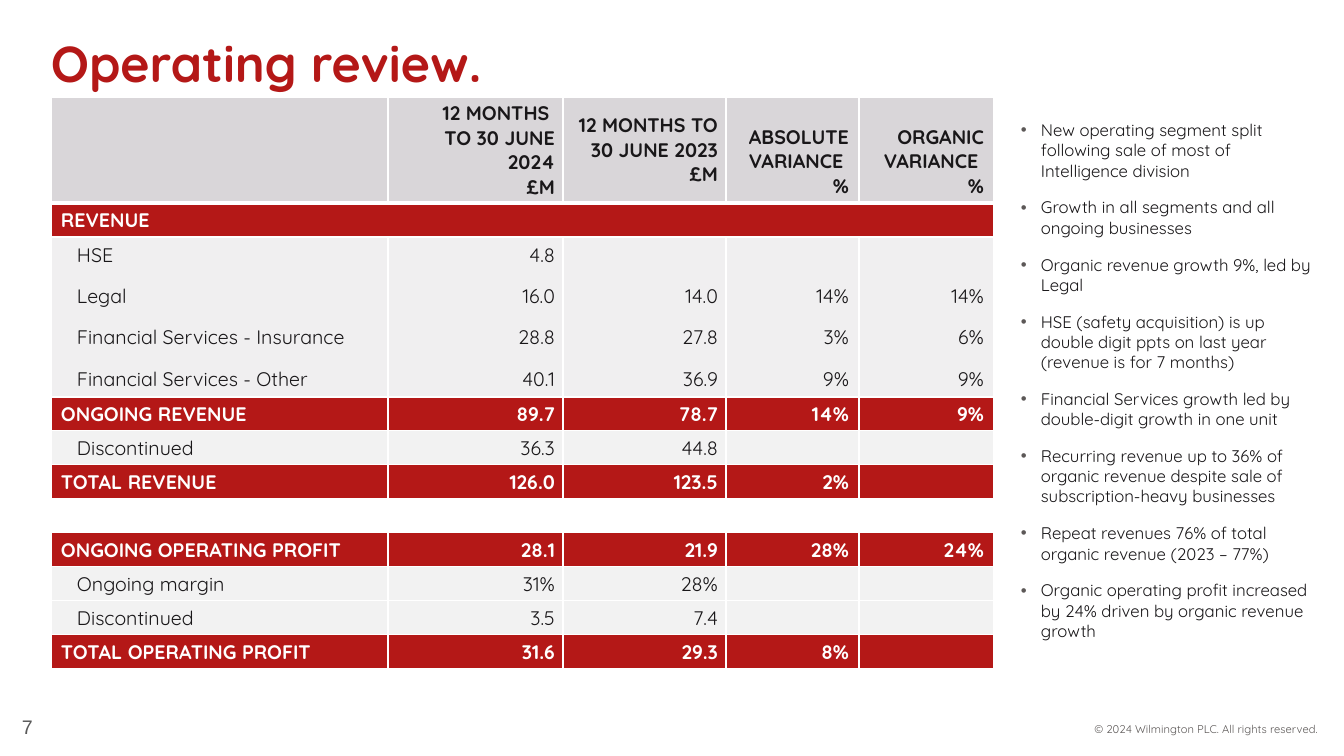
from lxml.etree import SubElement
from pptx import Presentation
from pptx.dml.color import RGBColor
from pptx.enum.text import MSO_ANCHOR as Anchor, PP_ALIGN as Align
from pptx.oxml.ns import qn
from pptx.util import Emu, Pt

PX = 9144000 // 1008 * 10 // 10 + 0  # EMU in one px at 100.8 px to the inch
COLORS = {"red": "B41817", "ink": "191719", "grey": "5C5857", "number": "595959",
          "header": "D9D6D9", "segment": "F0EFF0", "detail": "F2F2F2", "white": "FFFFFF"}

TITLE = "Operating review."
PAGE = "7"
COPYRIGHT = "© 2024 Wilmington PLC. All rights reserved."
COMMENTS = [
    "New operating segment split following sale of most of Intelligence division",
    "Growth in all segments and all ongoing businesses",
    "Organic revenue growth 9%, led by Legal",
    "HSE (safety acquisition) is up double digit ppts on last year (revenue is for 7 months)",
    "Financial Services growth led by double-digit growth in one unit",
    "Recurring revenue up to 36% of organic revenue despite sale of subscription-heavy businesses",
    "Repeat revenues 76% of total organic revenue (2023 – 77%)",
    "Organic operating profit increased by 24% driven by organic revenue growth",
]
# Each row: kind, then one entry per column; a list holds several paragraphs.
ROWS = [
    ("header", "", ["12 MONTHS ", "TO 30 JUNE 2024", "£M"], ["12 MONTHS TO 30 JUNE 2023", "£M"],
     ["ABSOLUTE VARIANCE ", "%"], ["ORGANIC VARIANCE ", "%"]),
    ("total", "REVENUE", "", "", "", ""),
    ("segment", ["HSE", "Legal", "Financial Services - Insurance", "Financial Services - Other"],
     ["4.8", "16.0", "28.8", "40.1"], ["", "14.0", "27.8", "36.9"],
     ["", "14%", "3%", "9%"], ["", "14%", "6%", "9%"]),
    ("total", "ONGOING REVENUE", "89.7", "78.7", "14%", "9%"),
    ("detail", "Discontinued", "36.3", "44.8", "", ""),
    ("total", "TOTAL REVENUE", "126.0", "123.5", "2%", ""),
    ("spacer", "", "", "", "", ""),
    ("total", "ONGOING OPERATING PROFIT", "28.1", "21.9", "28%", "24%"),
    ("detail", "Ongoing margin", "31%", "28%", "", ""),
    ("detail", "Discontinued", "3.5", "7.4", "", ""),
    ("total", "TOTAL OPERATING PROFIT", "31.6", "29.3", "8%", ""),
]
# Kind: fill, text colour, bold, label indent, row height
KINDS = {
    "header": ("header", "ink", True, 0, 106),
    "total": ("red", "white", True, 0, 34),
    "segment": ("segment", "ink", False, 16, 160),
    "detail": ("detail", "ink", False, 16, 34),
    "spacer": ("white", "ink", False, 0, 34),
}
COLUMNS = [337, 175, 163, 133, 135]
TABLE_LEFT, TABLE_TOP = 51, 97


def px(length):
    return Emu(length * PX)


def rgb(name):
    return RGBColor.from_string(COLORS[name])


def write(frame, texts, size, color, font="Quicksand", bold=False, align=Align.LEFT,
          before=0, after=0, indent=0, bullet=False):
    """Fill a text frame with one paragraph per text."""
    for i, text in enumerate(texts):
        paragraph = frame.paragraphs[0] if i == 0 else frame.add_paragraph()
        paragraph.alignment = align
        if before and i:
            paragraph.space_before = Pt(before)
        if after:
            paragraph.space_after = Pt(after)
        props = paragraph._p.get_or_add_pPr()
        if indent:
            props.set("marL", str(px(indent)))
        if bullet:
            props.set("indent", str(-px(indent)))
            tint = SubElement(props, qn("a:buClr"))
            SubElement(tint, qn("a:srgbClr"), val=COLORS["grey"])
            SubElement(props, qn("a:buFont"), typeface="Arial")
            SubElement(props, qn("a:buChar"), char="•")
        if text:
            run = paragraph.add_run()
            run.text = text
            run.font.name, run.font.size, run.font.bold = font, Pt(size), bold
            run.font.color.rgb = rgb(color)
        else:
            end = SubElement(paragraph._p, qn("a:endParaRPr"), sz=str(size * 100))
            SubElement(end, qn("a:latin"), typeface=font)


def add_text(slide, box, texts, size, color, anchor=Anchor.TOP, **style):
    frame = slide.shapes.add_textbox(*map(px, box)).text_frame
    frame.word_wrap = True
    frame.vertical_anchor = anchor
    write(frame, texts, size, color, **style)


def set_borders(cell, top, bottom):
    """Draw white cell borders; top and bottom widths are in points."""
    props = cell._tc.get_or_add_tcPr()
    for i, (side, width) in enumerate((("L", 1), ("R", 1), ("T", top), ("B", bottom))):
        line = props.makeelement(qn(f"a:ln{side}"), {"w": str(Pt(width))})
        fill = SubElement(line, qn("a:solidFill"))
        SubElement(fill, qn("a:srgbClr"), val=COLORS["white"])
        props.insert(i, line)


def add_results(slide):
    heights = [KINDS[kind][-1] for kind, *_ in ROWS]
    box = (TABLE_LEFT, TABLE_TOP, sum(COLUMNS), sum(heights))
    table = slide.shapes.add_table(len(ROWS), len(COLUMNS), *map(px, box)).table
    table.first_row = table.horz_banding = False
    for column, width in zip(table.columns, COLUMNS):
        column.width = px(width)
    for r, (kind, *entries) in enumerate(ROWS):
        fill, color, bold, indent, height = KINDS[kind]
        table.rows[r].height = px(height)
        for c, entry in enumerate(entries):
            cell = table.cell(r, c)
            cell.fill.solid()
            cell.fill.fore_color.rgb = rgb(fill)
            is_amount = c in (1, 2)
            cell.margin_left = cell.margin_right = px(8 if is_amount else 10)
            cell.margin_top = cell.margin_bottom = px(0 if is_amount else 5)
            is_variance_head = kind == "header" and c > 2
            cell.vertical_anchor = Anchor.BOTTOM if is_variance_head else Anchor.MIDDLE
            write(cell.text_frame, entry if isinstance(entry, list) else [entry], 14, color,
                  bold=bold, align=Align.RIGHT if c else Align.LEFT,
                  before=12 if kind == "segment" else 0, indent=0 if c else indent)
            set_borders(cell, top=3 if r == 1 else 1, bottom=3 if r == 0 else 1)
    table.cell(1, 0).merge(table.cell(1, len(COLUMNS) - 1))


def main():
    deck = Presentation()
    deck.slide_width, deck.slide_height = px(1344), px(756)
    slide = deck.slides.add_slide(deck.slide_layouts[6])
    add_text(slide, (963, 717, 365, 24), [COPYRIGHT], 8, "grey", align=Align.RIGHT)
    add_text(slide, (41, 9, 1124, 107), [TITLE], 36, "red", anchor=Anchor.MIDDLE, bold=True)
    add_text(slide, (1011, 115, 311, 576), COMMENTS, 12, "ink", after=12, indent=20, bullet=True)
    add_text(slide, (12, 707, 302, 40), [PAGE], 14, "number", anchor=Anchor.MIDDLE, font="Arial")
    add_results(slide)
    deck.save("out.pptx")


if __name__ == "__main__":
    main()
